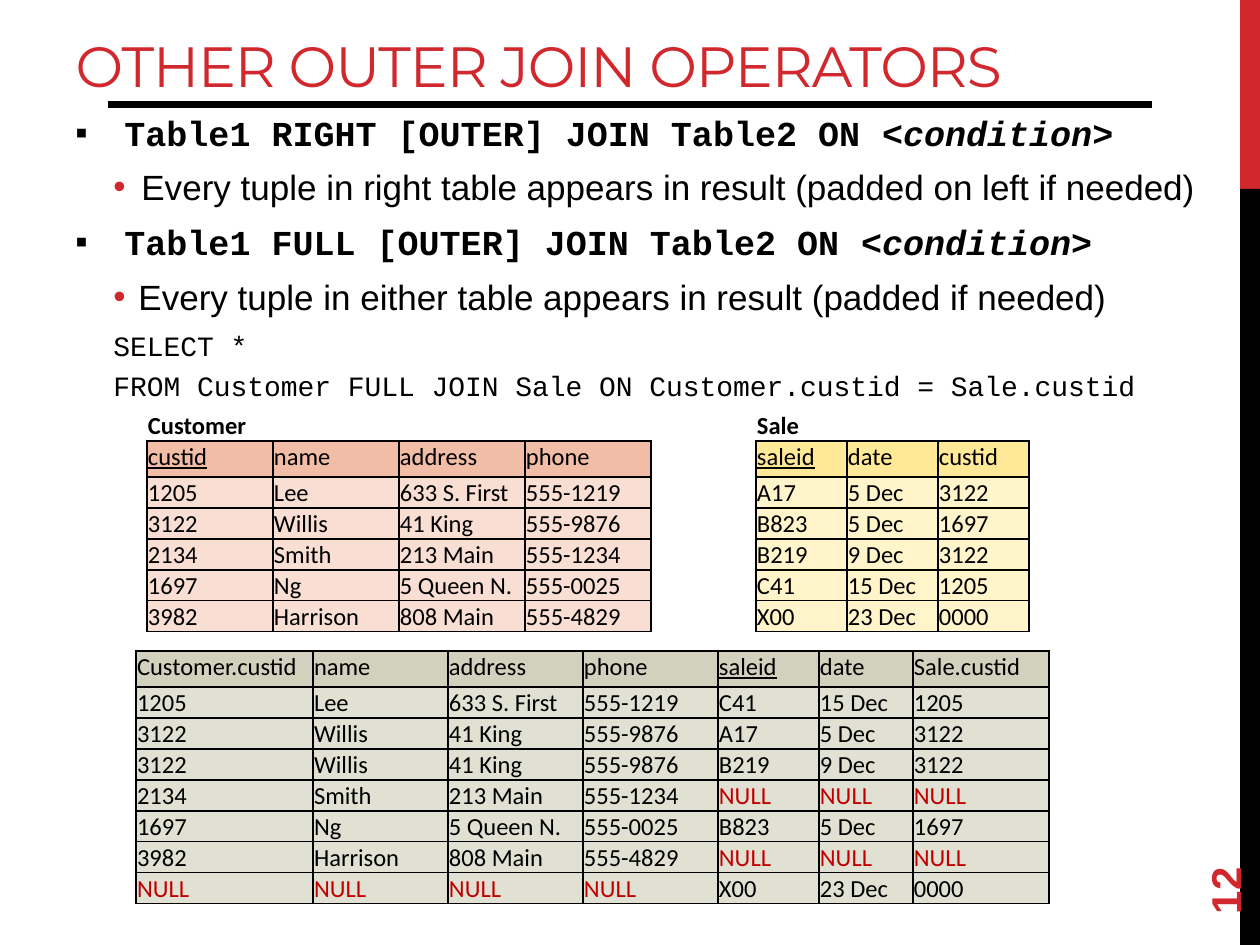
from lxml.etree import SubElement
from pptx import Presentation
from pptx.dml.color import RGBColor
from pptx.enum.shapes import MSO_CONNECTOR, MSO_SHAPE
from pptx.enum.text import MSO_ANCHOR, MSO_AUTO_SIZE, PP_ALIGN
from pptx.oxml import parse_xml
from pptx.oxml.ns import nsdecls, qn
from pptx.util import Emu, Pt

PX = 914400 / 126
RED = RGBColor(0xD1, 0x28, 0x2E)
NULL_RED = RGBColor(0xC0, 0x00, 0x00)
BLACK = RGBColor(0x00, 0x00, 0x00)
CUSTOMER_HEAD = RGBColor(0xF1, 0xBD, 0xA7)
CUSTOMER_BODY = RGBColor(0xF8, 0xDE, 0xD3)
SALE_HEAD = RGBColor(0xFF, 0xE9, 0x96)
SALE_BODY = RGBColor(0xFF, 0xF4, 0xCA)
RESULT_HEAD = RGBColor(0xD2, 0xD1, 0xBE)
RESULT_BODY = RGBColor(0xE1, 0xE1, 0xD3)


def px(*lengths):
    return [Emu(round(length * PX)) for length in lengths]


def add_run(paragraph, text, font, size, color=BLACK, bold=False, italic=False):
    run = paragraph.add_run()
    run.text = text
    run.font.name = font
    run.font.size = Pt(size)
    run.font.color.rgb = color
    run.font.bold = bold
    run.font.italic = italic
    return run


prs = Presentation()
prs.slide_width, prs.slide_height = px(1260, 945)
slide = prs.slides.add_slide(prs.slide_layouts[5])
shapes = slide.shapes

# Side stripe and rule under the title
for top, height, color in [(0, 189, RED), (189, 756, BLACK)]:
    stripe = shapes.add_shape(MSO_SHAPE.RECTANGLE, *px(1240, top, 20, height))
    stripe.shadow.inherit = False
    stripe.fill.solid()
    stripe.fill.fore_color.rgb = color
    stripe.line.fill.background()

rule = shapes.add_connector(MSO_CONNECTOR.STRAIGHT, *px(108, 105, 1152, 105))
rule.line.color.rgb = BLACK
rule.line.width = Pt(4)
SubElement(rule._element.spPr, qn("a:effectLst"))

# Title
title = shapes.title
title.left, title.top, title.width, title.height = px(63, 21, 1176, 84)
title.text_frame.auto_size = MSO_AUTO_SIZE.NONE
title.text_frame.vertical_anchor = MSO_ANCHOR.BOTTOM
heading = title.text_frame.paragraphs[0]
heading.alignment = PP_ALIGN.LEFT
heading_run = add_run(heading, "OTHER OUTER JOIN OPERATORS", "Montserrat", 32.4, RED)
heading_run.font._element.set("spc", "-60")

# Join syntax, explanations and query: bullet, margin, indent, before, after, runs
CODE = {"font": "Courier New", "size": 20, "bold": True}
CONDITION = {**CODE, "italic": True}
PROSE = {"font": "Arial", "size": 20}
QUERY = {"font": "Courier New", "size": 16}
lines = [
    ("▪", 49, -49, 4.8, 4.8, [("Table1 RIGHT [OUTER] JOIN Table2 ON ", CODE),
                              ("<condition>", CONDITION)]),
    ("•", 66, -28, 2.4, 2.4,
     [("Every tuple in right table appears in result (padded on left if needed)", PROSE)]),
    ("▪", 49, -49, 4.8, 4.8, [("Table1 FULL [OUTER] JOIN Table2 ON ", CODE),
                              ("<condition>", CONDITION)]),
    ("•", 63, -25, 2.4, 2.4,
     [("Every tuple in either table appears in result (padded if needed)", PROSE)]),
    (None, 38, 0, 4.4, 2.4, [("SELECT *", QUERY)]),
    (None, 38, 0, 1, 0,
     [("FROM Customer FULL JOIN Sale ON Customer.custid = Sale.custid", QUERY)]),
]
body = shapes.add_textbox(*px(63, 105, 1176, 315)).text_frame
body.word_wrap = True
for number, (bullet, margin, indent, before, after, runs) in enumerate(lines):
    line = body.add_paragraph() if number else body.paragraphs[0]
    line.space_before, line.space_after = Pt(before), Pt(after)
    properties = line._p.get_or_add_pPr()
    properties.set("marL", str(px(margin)[0]))
    properties.set("indent", str(px(indent)[0]))
    if bullet:
        bullet_color = RED if bullet == "•" else BLACK
        color_choice = SubElement(properties, qn("a:buClr"))
        SubElement(color_choice, qn("a:srgbClr"), val=str(bullet_color))
        SubElement(properties, qn("a:buFont"), typeface="Arial")
        SubElement(properties, qn("a:buChar"), char=bullet)
    for text, style in runs:
        add_run(line, text, **style)

# Slide number
page = shapes.add_textbox(*px(1134, 811, 181, 50))
page.rotation = 270
page.text_frame.word_wrap = True
page.text_frame.vertical_anchor = MSO_ANCHOR.MIDDLE
add_run(page.text_frame.paragraphs[0], "12", "Arial", 24, RED, bold=True)

# Tables: caption, left, top, column widths, key column, fills, rows
customer_rows = [
    "custid|name|address|phone",
    "1205|Lee|633 S. First|555-1219",
    "3122|Willis|41 King|555-9876",
    "2134|Smith|213 Main|555-1234",
    "1697|Ng|5 Queen N.|555-0025",
    "3982|Harrison|808 Main|555-4829",
]
sale_rows = [
    "saleid|date|custid",
    "A17|5 Dec|3122",
    "B823|5 Dec|1697",
    "B219|9 Dec|3122",
    "C41|15 Dec|1205",
    "X00|23 Dec|0000",
]
result_rows = [
    "Customer.custid|name|address|phone|saleid|date|Sale.custid",
    "1205|Lee|633 S. First|555-1219|C41|15 Dec|1205",
    "3122|Willis|41 King|555-9876|A17|5 Dec|3122",
    "3122|Willis|41 King|555-9876|B219|9 Dec|3122",
    "2134|Smith|213 Main|555-1234|NULL|NULL|NULL",
    "1697|Ng|5 Queen N.|555-0025|B823|5 Dec|1697",
    "3982|Harrison|808 Main|555-4829|NULL|NULL|NULL",
    "NULL|NULL|NULL|NULL|X00|23 Dec|0000",
]
relations = [
    ("Customer", 147, 410, [126] * 4, 0, CUSTOMER_HEAD, CUSTOMER_BODY, customer_rows),
    ("Sale", 756, 410, [91] * 3, 0, SALE_HEAD, SALE_BODY, sale_rows),
    (None, 136, 651, [177, 135, 135, 135, 101, 94, 136], 4,
     RESULT_HEAD, RESULT_BODY, result_rows),
]
for caption, left, top, widths, key, head_fill, body_fill, rows in relations:
    header = 1 if caption else 0
    records = [row.split("|") for row in rows]
    if caption:
        records.insert(0, [caption] + [""] * (len(widths) - 1))
    heights = [36 if r == header else 31 for r in range(len(records))]
    table = shapes.add_table(len(records), len(widths),
                             *px(left, top, sum(widths), sum(heights))).table
    table.first_row = table.horz_banding = False
    for column, width in zip(table.columns, px(*widths)):
        column.width = width
    for row, height in zip(table.rows, px(*heights)):
        row.height = height
    if caption:
        table.cell(0, 0).merge(table.cell(0, len(widths) - 1))

    for r, record in enumerate(records):
        for c, value in enumerate(record):
            cell = table.cell(r, c)
            cell.vertical_anchor = MSO_ANCHOR.BOTTOM
            cell.margin_left = cell.margin_right = cell.margin_top = px(1)[0]
            cell.margin_bottom = px(5 if r == header else 0)[0]
            if r < header:
                cell.fill.background()
            else:
                cell.fill.solid()
                cell.fill.fore_color.rgb = head_fill if r == header else body_fill
            sides = ["lnB"] if r < header else ["lnL", "lnR", "lnT", "lnB"]
            for position, side in enumerate(sides):
                cell._tc.get_or_add_tcPr().insert(position, parse_xml(
                    f'<a:{side} {nsdecls("a")} w="12700"><a:solidFill>'
                    f'<a:srgbClr val="{BLACK}"/></a:solidFill></a:{side}>'))
            if value:
                entry = add_run(cell.text_frame.paragraphs[0], value, "Calibri", 14,
                                NULL_RED if value == "NULL" else BLACK, bold=r < header)
                entry.font.underline = r == header and c == key

prs.save("out.pptx")
